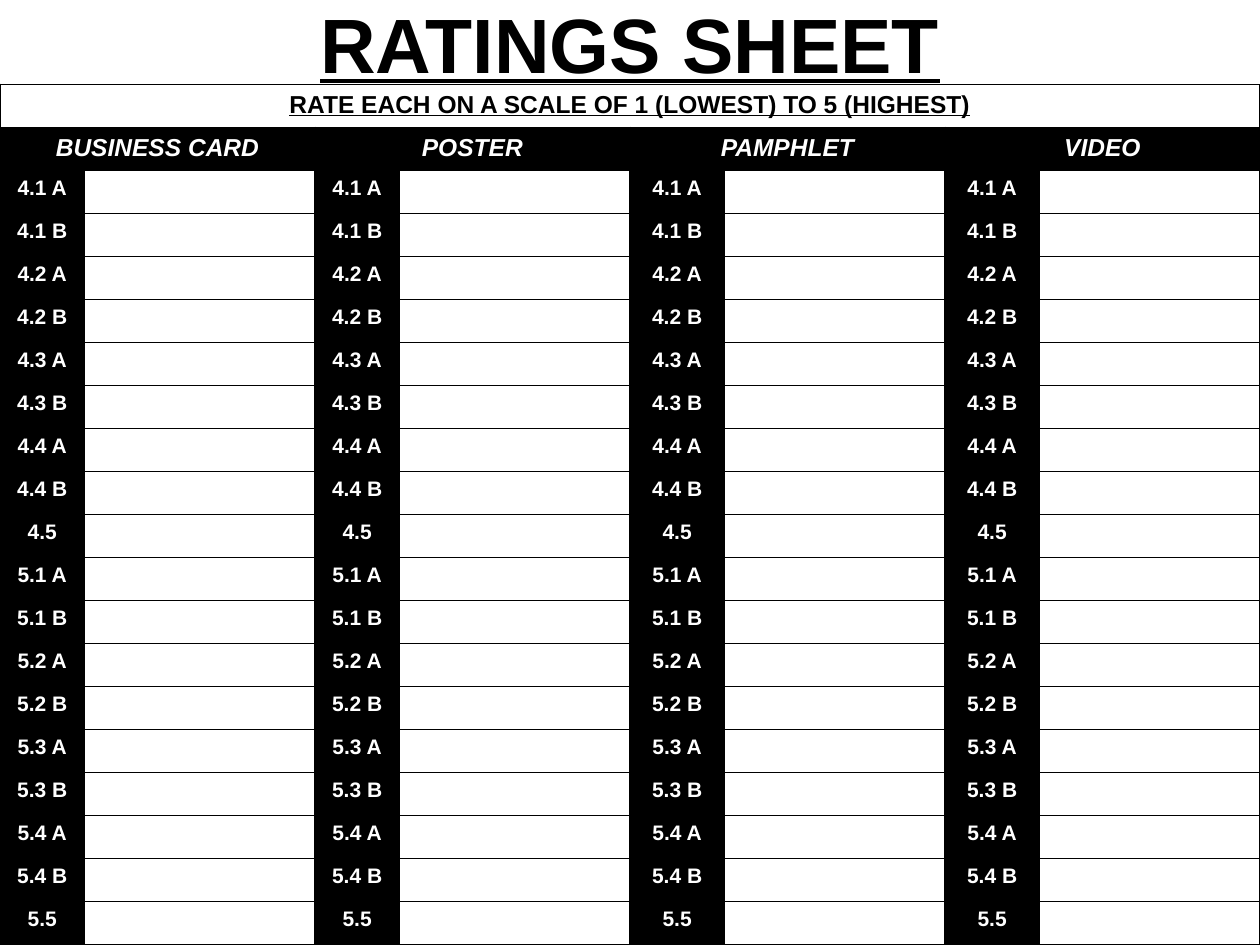
"""Build a ratings sheet slide with one scoring table."""
from dataclasses import dataclass

import lxml.etree
import pptx
import pptx.dml.color
import pptx.enum.text
import pptx.oxml.ns
import pptx.table
import pptx.text.text
import pptx.util

Inches = pptx.util.Inches
RGB = pptx.dml.color.RGBColor
qn = pptx.oxml.ns.qn


@dataclass(frozen=True)
class Theme:
    font: str = "Arial"
    black: str = "000000"
    white: str = "FFFFFF"
    title: int = 44
    head: int = 14
    label: int = 12
    line: int = 1


@dataclass(frozen=True)
class Style:
    size: int
    color: str
    under: bool = False
    slant: bool = False


@dataclass(frozen=True)
class Group:
    name: str
    label: float
    score: float


THEME = Theme()
TITLE = Style(THEME.title, THEME.black, under=True)
RULE = Style(THEME.head, THEME.black, under=True)
HEAD = Style(THEME.head, THEME.white, slant=True)
LABEL = Style(THEME.label, THEME.white)
GROUPS = [
    Group("BUSINESS CARD", 0.67, 1.83),
    Group("POSTER", 0.67, 1.83),
    Group("PAMPHLET", 0.75, 1.75),
    Group("VIDEO", 0.75, 1.75),
]
ITEMS = [
    item
    for part in (4, 5)
    for item in [f"{part}.{num} {side}" for num in range(1, 5) for side in "AB"] + [f"{part}.5"]
]
TOP, WIDE, HIGH = 0.67, 10, 7.5


def write(frame: pptx.text.text.TextFrame, text: str, style: Style) -> None:
    frame.text = text
    para = frame.paragraphs[0]
    para.alignment = pptx.enum.text.PP_ALIGN.CENTER
    font = para.runs[0].font
    font.name = THEME.font
    font.size = pptx.util.Pt(style.size)
    font.bold = True
    font.italic = style.slant
    font.underline = style.under
    font.color.rgb = RGB.from_string(style.color)


def edge(cell: pptx.table._Cell) -> None:
    props = cell._tc.get_or_add_tcPr()
    for side in ("a:lnL", "a:lnR", "a:lnT", "a:lnB"):
        line = lxml.etree.SubElement(props, qn(side), w=str(pptx.util.Pt(THEME.line)))
        fill = lxml.etree.SubElement(line, qn("a:solidFill"))
        lxml.etree.SubElement(fill, qn("a:srgbClr"), val=THEME.black)


def blank(cell: pptx.table._Cell) -> None:
    edge(cell)
    cell.fill.background()
    para = cell.text_frame.paragraphs[0]
    lxml.etree.SubElement(para._p, qn("a:endParaRPr"), sz=str(THEME.label * 100))


def mark(cell: pptx.table._Cell, text: str, style: Style) -> None:
    cell.fill.solid()
    cell.fill.fore_color.rgb = RGB.from_string(THEME.black)
    write(cell.text_frame, text, style)


def draw(slide: pptx.slide.Slide) -> None:
    rows, cols = len(ITEMS) + 2, len(GROUPS) * 2
    shape = slide.shapes.add_table(
        rows, cols, 0, Inches(TOP), Inches(WIDE), Inches(HIGH - TOP))
    table = shape.table
    table.first_row = table.horz_banding = False
    for row in table.rows:
        row.height = Inches((HIGH - TOP) / rows)
    for cell in table.iter_cells():
        blank(cell)
    table.cell(0, 0).merge(table.cell(0, cols - 1))
    write(table.cell(0, 0).text_frame,
          "RATE EACH ON A SCALE OF 1 (LOWEST) TO 5 (HIGHEST)", RULE)
    for index, group in enumerate(GROUPS):
        col = index * 2
        table.columns[col].width = Inches(group.label)
        table.columns[col + 1].width = Inches(group.score)
        table.cell(1, col).merge(table.cell(1, col + 1))
        mark(table.cell(1, col), group.name, HEAD)
        for row, item in enumerate(ITEMS, 2):
            mark(table.cell(row, col), item, LABEL)


def main() -> None:
    deck = pptx.Presentation()
    deck.slide_width, deck.slide_height = Inches(WIDE), Inches(HIGH)
    slide = deck.slides.add_slide(deck.slide_layouts[5])
    title = slide.shapes.title
    title.left, title.top, title.width, title.height = 0, 0, Inches(WIDE), Inches(TOP)
    frame = title.text_frame
    frame.word_wrap = True
    frame.auto_size = pptx.enum.text.MSO_AUTO_SIZE.NONE
    frame.vertical_anchor = pptx.enum.text.MSO_ANCHOR.MIDDLE
    write(frame, "RATINGS SHEET", TITLE)
    draw(slide)
    deck.save("out.pptx")


if __name__ == "__main__":
    main()
